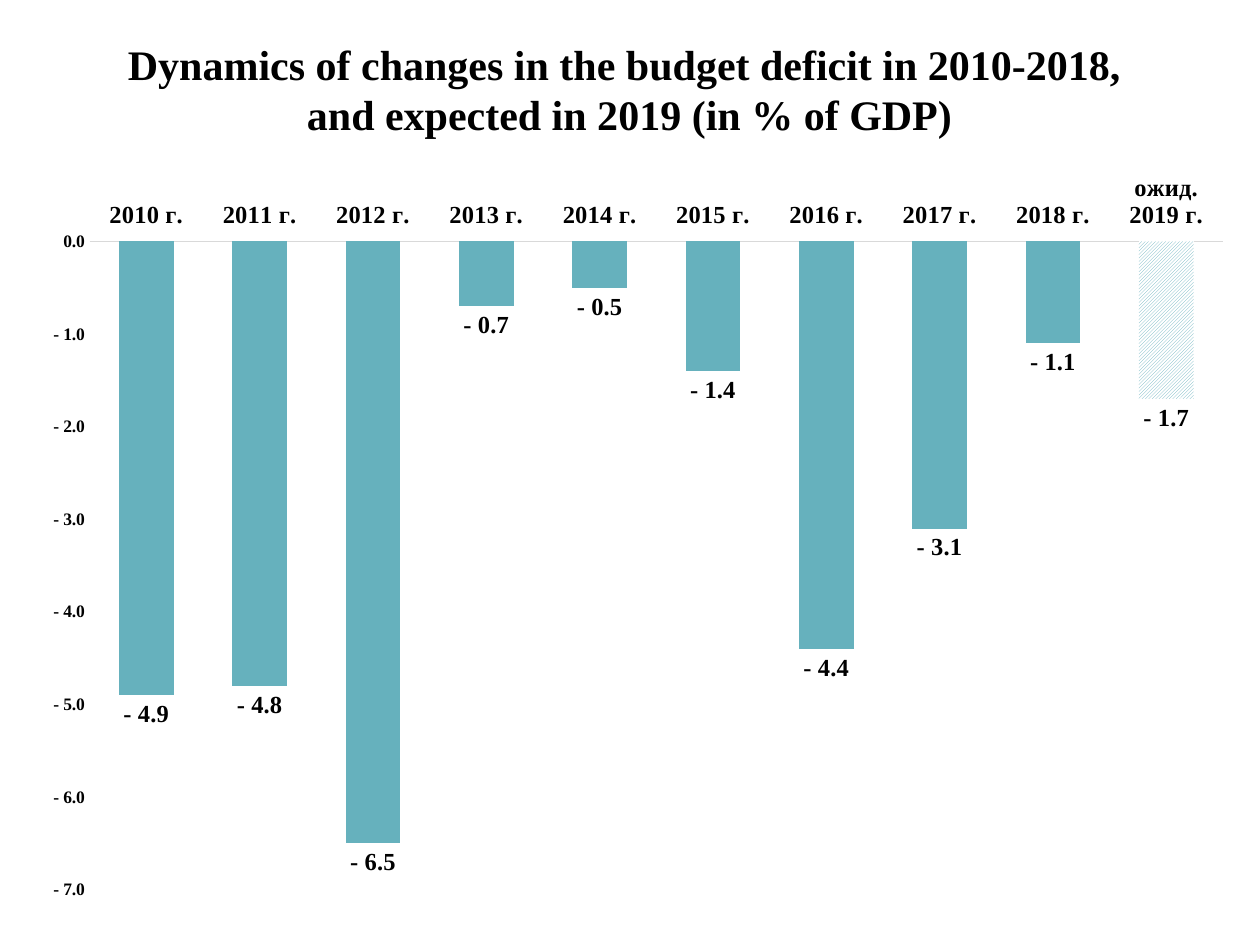
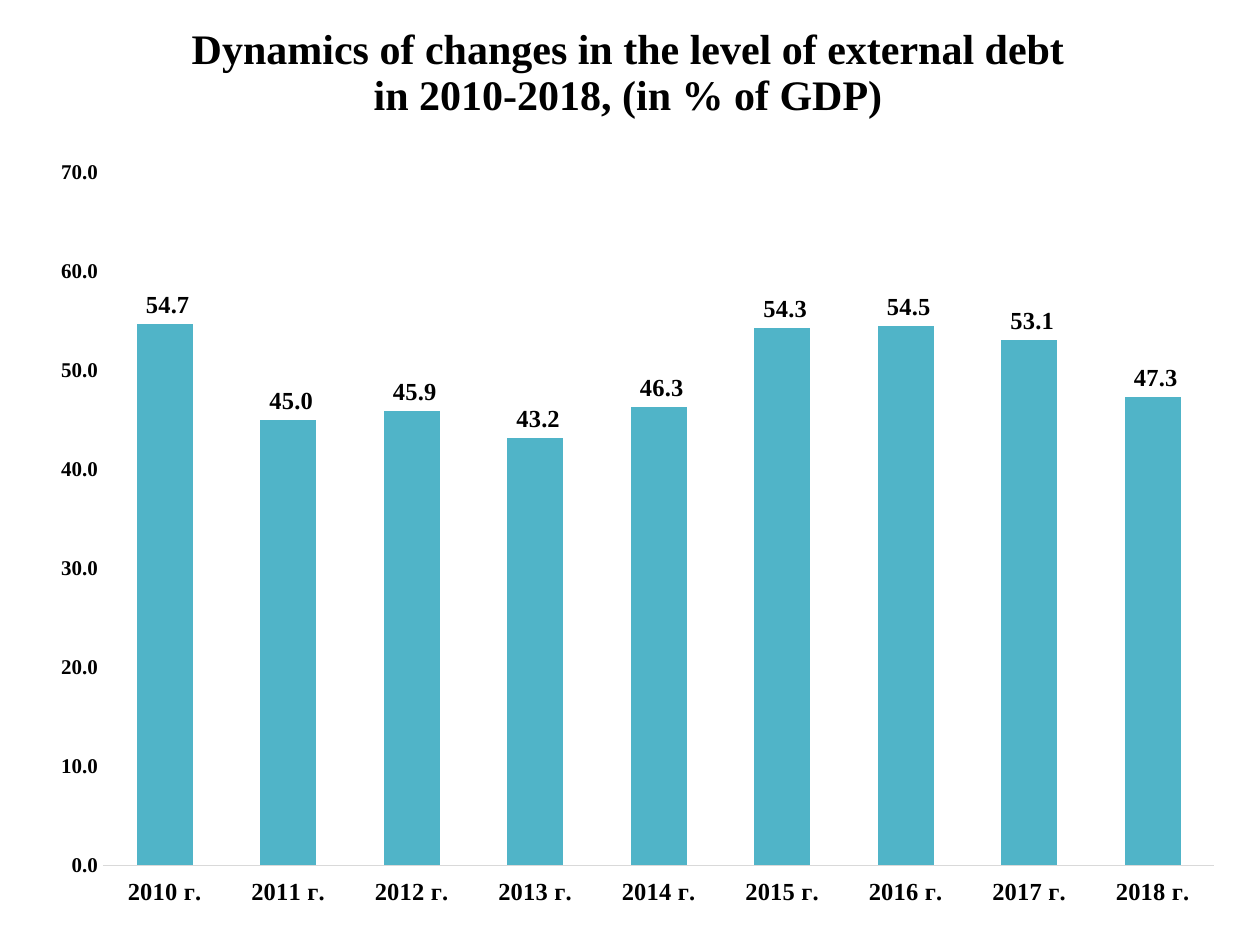
from dataclasses import dataclass

from lxml.etree import SubElement
from pptx import Presentation
from pptx.chart.data import CategoryChartData
from pptx.dml.color import RGBColor
from pptx.enum.chart import (XL_CHART_TYPE, XL_LABEL_POSITION,
                             XL_TICK_LABEL_POSITION, XL_TICK_MARK)
from pptx.enum.dml import MSO_PATTERN
from pptx.enum.text import MSO_ANCHOR, MSO_AUTO_SIZE, PP_ALIGN
from pptx.oxml.ns import qn
from pptx.util import Cm, Pt


@dataclass(frozen=True)
class Theme:
    """Colours, font, type sizes and number format of the deck."""
    font: str = "Times New Roman"
    ink: RGBColor = RGBColor(0, 0, 0)
    paper: RGBColor = RGBColor(255, 255, 255)
    axis: RGBColor = RGBColor(0xD9, 0xD9, 0xD9)
    deficit: RGBColor = RGBColor(0x66, 0xB1, 0xBD)
    debt: RGBColor = RGBColor(0x50, 0xB4, 0xC8)
    title_size: int = 24
    label_size: int = 14
    number_format: str = r"#\ ##0.0"


THEME = Theme()
CHART_BOX = (0.64, 2.95, 24.33, 15.47)


def style_font(font, size):
    """Give a font the bold black face of the deck."""
    font.name = THEME.font
    font.size = Pt(size)
    font.bold = True
    font.color.rgb = THEME.ink


def write_text(tf, lines, size, align=PP_ALIGN.CENTER, spacing=None):
    """Write one paragraph for each line of text."""
    for i, line in enumerate(lines):
        p = tf.paragraphs[0] if i == 0 else tf.add_paragraph()
        p.alignment = align
        if spacing:
            p.line_spacing = Pt(spacing)
        r = p.add_run()
        r.text = line
        style_font(r.font, size)


def place_title(s, lines, box, spacing=None):
    """Move the title placeholder into the box and fill it."""
    sp = s.shapes.title
    sp.left, sp.top, sp.width, sp.height = map(Cm, box)
    tf = sp.text_frame
    tf.word_wrap = True
    tf.auto_size = MSO_AUTO_SIZE.SHAPE_TO_FIT_TEXT
    tf.vertical_anchor = MSO_ANCHOR.TOP
    write_text(tf, lines, THEME.title_size, spacing=spacing)


def set_plot_layout(chart, plot_box):
    """Fix the inner plot area as fractions of the chart."""
    area = chart.element.find(".//" + qn("c:plotArea"))
    for old in area.findall(qn("c:layout")):
        area.remove(old)
    layout = SubElement(area, qn("c:layout"))
    area.insert(0, layout)
    manual = SubElement(layout, qn("c:manualLayout"))
    settings = [("layoutTarget", "inner"), ("xMode", "edge"), ("yMode", "edge")]
    settings += zip("xywh", plot_box)
    for tag, value in settings:
        SubElement(manual, qn(f"c:{tag}")).set("val", str(value))


def format_axes(chart, low, high, step, size, category_labels):
    """Style the year axis and the percentage axis."""
    years, percent = chart.category_axis, chart.value_axis
    for axis, label_size in ((years, THEME.label_size), (percent, size)):
        axis.has_major_gridlines = False
        axis.major_tick_mark = axis.minor_tick_mark = XL_TICK_MARK.NONE
        style_font(axis.tick_labels.font, label_size)
    years.tick_label_position = category_labels
    years.format.line.color.rgb = THEME.axis
    years.format.line.width = Pt(0.75)
    percent.format.line.fill.background()
    percent.minimum_scale, percent.maximum_scale = low, high
    percent.major_unit = step
    percent.tick_labels.number_format = THEME.number_format
    percent.tick_labels.number_format_is_linked = False


def add_column_chart(s, box, categories, values, color, gap, plot_box, scale,
                     axis_size, category_labels):
    """Add a labelled single-series column chart in the box."""
    data = CategoryChartData(number_format=THEME.number_format)
    data.categories = categories
    data.add_series("Series 1", values)
    frame = s.shapes.add_chart(XL_CHART_TYPE.COLUMN_CLUSTERED, *map(Cm, box), data)
    chart = frame.chart
    chart.has_title = chart.has_legend = False
    style_font(chart.font, THEME.label_size)
    set_plot_layout(chart, plot_box)
    format_axes(chart, *scale, axis_size, category_labels)

    plot = chart.plots[0]
    plot.gap_width, plot.overlap, plot.vary_by_categories = gap, -27, False
    series = plot.series[0]
    series.invert_if_negative = False
    series.format.fill.solid()
    series.format.fill.fore_color.rgb = color
    labels = series.data_labels
    labels.show_value = True
    labels.position = XL_LABEL_POSITION.OUTSIDE_END
    labels.number_format = THEME.number_format
    labels.number_format_is_linked = False
    style_font(labels.font, THEME.label_size)
    return chart


def hatch_point(chart, index, color):
    """Mark one column as expected with a diagonal pattern."""
    fill = chart.plots[0].series[0].points[index].format.fill
    fill.patterned()
    fill.pattern = MSO_PATTERN.DARK_UPWARD_DIAGONAL
    fill.fore_color.rgb = color
    fill.back_color.rgb = THEME.paper


def year_labels(first, last):
    """Return the category labels for a span of years."""
    return [f"{year} г." for year in range(first, last + 1)]


def build_deficit_slide(s):
    """Build the budget deficit slide."""
    place_title(s, ["Dynamics of changes in the budget deficit in 2010-2018, ",
                    "and expected in 2019 (in % of GDP)"],
                (0.84, 0.64, 23.7, 2.31))
    chart = add_column_chart(
        s, CHART_BOX, year_labels(2010, 2018) + ["ожид. 2019 г."],
        [-4.9, -4.8, -6.5, -0.7, -0.5, -1.4, -4.4, -3.1, -1.1, -1.7],
        THEME.deficit, gap=107, plot_box=(0.048, 0.124, 0.939, 0.845),
        scale=(-7, 0, 1), axis_size=10,
        category_labels=XL_TICK_LABEL_POSITION.HIGH)
    hatch_point(chart, 9, THEME.deficit)


def build_debt_slide(s):
    """Build the external debt slide."""
    place_title(s, ["Dynamics of changes in the level of external debt",
                    "in 2010-2018, (in % of GDP)"],
                (0.81, 0.43, 23.7, 2.11), spacing=26)
    add_column_chart(
        s, CHART_BOX, year_labels(2010, 2018),
        [54.7, 45, 45.9, 43.2, 46.3, 54.3, 54.5, 53.1, 47.3],
        THEME.debt, gap=121, plot_box=(0.059, 0.034, 0.921, 0.903),
        scale=(0, 70, 10), axis_size=12,
        category_labels=XL_TICK_LABEL_POSITION.LOW)


def main():
    """Create the presentation and save it."""
    prs = Presentation()
    prs.slide_width, prs.slide_height = Cm(25.4), Cm(19.05)
    title_only = prs.slide_layouts[5]
    for build in (build_deficit_slide, build_debt_slide):
        build(prs.slides.add_slide(title_only))
    prs.save("out.pptx")


if __name__ == "__main__":
    main()
